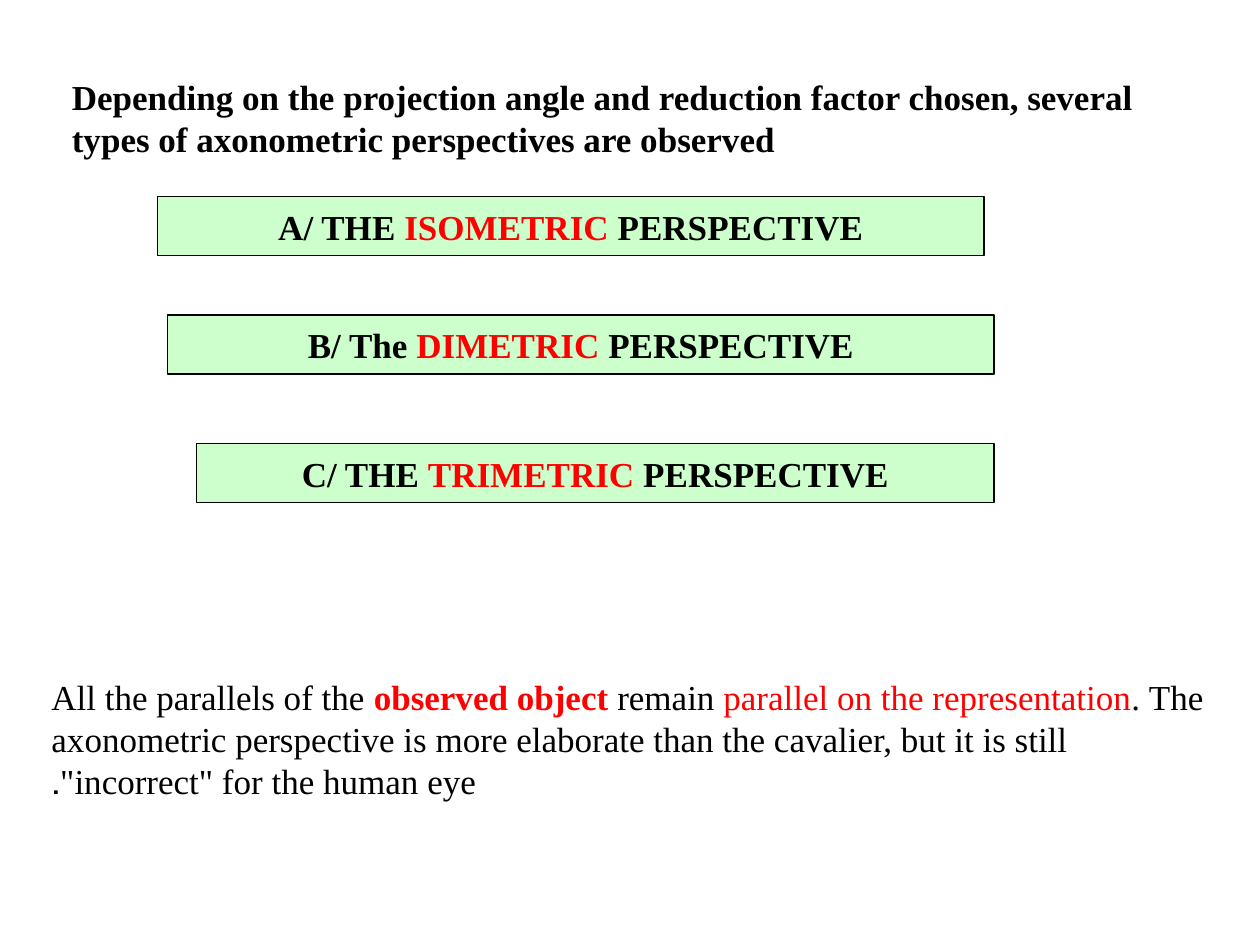
from pptx import Presentation
from pptx.dml.color import RGBColor
from pptx.enum import shapes, text
from pptx.util import Inches, Pt

BLACK, RED, GREEN = "000000", "FF0000", "CCFFCC"

# A run is (text, colour, bold); a box is (left, top, width, height) in inches.
HEADING = [("Depending on the projection angle and reduction factor chosen, "
            "several types of axonometric perspectives are observed", BLACK, True)]
HEADING_BOX = (0.47, 0.55, 8.91, 0.77)

PERSPECTIVES = [
    ("A/ THE ", "ISOMETRIC ", (1.25, 1.56, 6.56, 0.47)),
    ("B/ The ", "DIMETRIC ", (1.33, 2.5, 6.56, 0.47)),
    ("C/ THE ", "TRIMETRIC ", (1.56, 3.52, 6.33, 0.47)),
]

REMARK = [
    ("All the parallels of the ", BLACK, False),
    ("observed object ", RED, True),
    ("remain ", BLACK, False),
    ("parallel on the representation", RED, False),
    (". The axonometric perspective is more elaborate than the cavalier, "
     'but it is still "incorrect" for the human eye.', BLACK, False),
]
REMARK_BOX = (0.31, 5.31, 9.45, 1.11)


def colour(value):
    return RGBColor.from_string(value)


def write(shape, runs, alignment, anchor):
    """Fill the shape with one right-to-left paragraph made of runs."""
    frame = shape.text_frame
    frame.word_wrap = True
    frame.auto_size = text.MSO_AUTO_SIZE.NONE
    frame.vertical_anchor = anchor
    paragraph = frame.paragraphs[0]
    paragraph.alignment = alignment
    paragraph._p.get_or_add_pPr().set("rtl", "1")
    paragraph.font.name = "Times New Roman"
    paragraph.font.size = Pt(20)
    for content, run_colour, bold in runs:
        run = paragraph.add_run()
        run.text = content
        run.font.name = "Times New Roman"
        run.font.size = Pt(20)
        run.font.bold = bold
        run.font.color.rgb = colour(run_colour)


def main():
    presentation = Presentation()
    presentation.slide_width, presentation.slide_height = Inches(10), Inches(7.5)
    slide = presentation.slides.add_slide(presentation.slide_layouts.get_by_name("Title Only"))
    left, top = text.PP_ALIGN.LEFT, text.MSO_ANCHOR.TOP

    title = slide.shapes.title
    title.left, title.top, title.width, title.height = map(Inches, HEADING_BOX)
    write(title, HEADING, left, top)

    for label, kind, box in PERSPECTIVES:
        banner = slide.shapes.add_shape(shapes.MSO_SHAPE.RECTANGLE, *map(Inches, box))
        banner.shadow.inherit = False
        banner.fill.solid()
        banner.fill.fore_color.rgb = colour(GREEN)
        banner.line.color.rgb = colour(BLACK)
        banner.line.width = Pt(0.75)
        runs = [(label, BLACK, True), (kind, RED, True), ("PERSPECTIVE", BLACK, True)]
        write(banner, runs, text.PP_ALIGN.CENTER, text.MSO_ANCHOR.MIDDLE)

    remark = slide.shapes.add_textbox(*map(Inches, REMARK_BOX))
    write(remark, REMARK, left, top)

    presentation.save("out.pptx")


if __name__ == "__main__":
    main()
